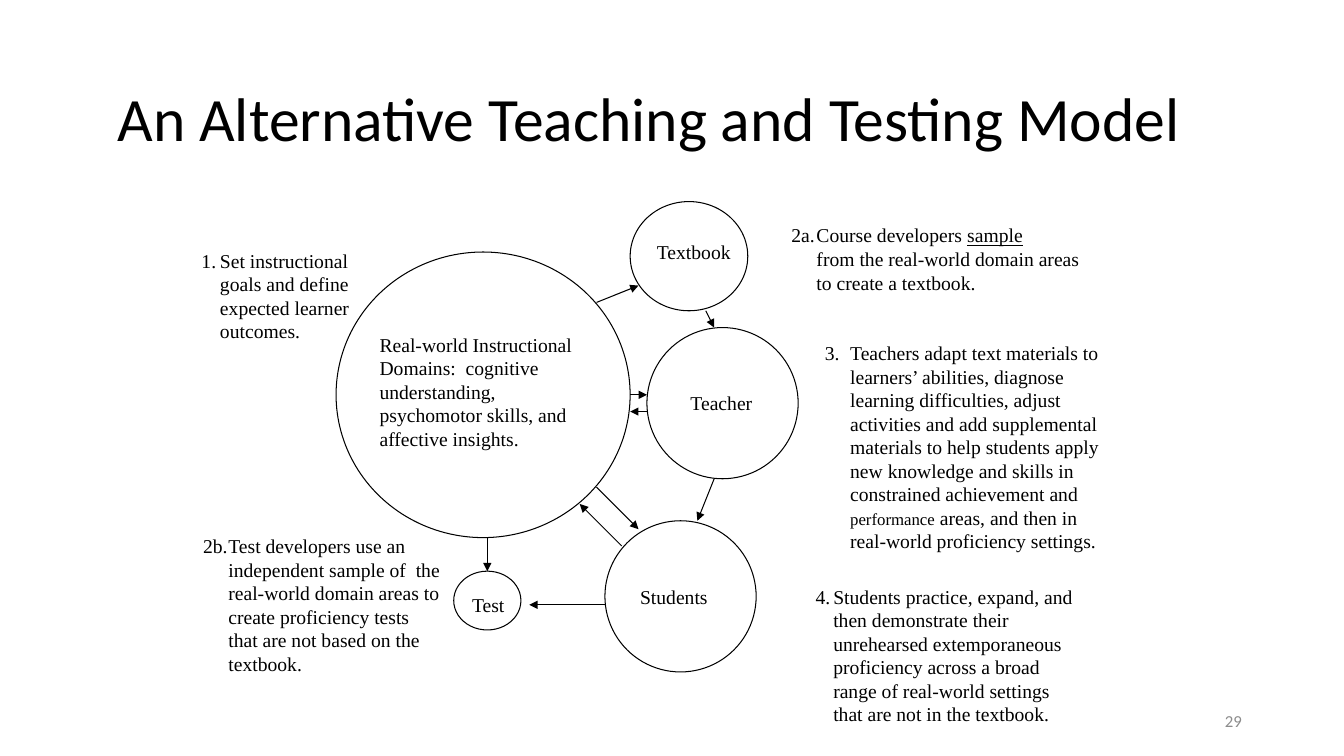
from lxml import etree
from pptx import Presentation, util as u
from pptx.dml.color import RGBColor
from pptx.enum import shapes, text
from pptx.oxml.ns import qn

prs = Presentation()
prs.slide_width, prs.slide_height = u.Inches(13.33), u.Inches(7.5)
s = prs.slides.add_slide(prs.slide_layouts[6])

INK, GREY = "000000", "8C8C8C"
SERIF, SANS = "Times New Roman", "Calibri"


def grid(*cells):
    """Turn twelfths of an inch into lengths."""
    return [u.Inches(c / 12) for c in cells]


def add_text(box, words, font=SERIF, size=14, color=INK, wrap=True):
    """Add a text box at box, in grid cells, and return its text frame."""
    tf = s.shapes.add_textbox(*grid(*box)).text_frame
    tf.word_wrap = wrap
    tf.text = words
    for r in tf.paragraphs[0].runs:
        r.font.name, r.font.size = font, u.Pt(size)
        r.font.color.rgb = RGBColor.from_string(color)
    return tf


# Title and slide number
title = add_text((12.8, 3.1, 132, 22.8), "An Alternative Teaching and Testing Model", SANS, 44)
title.paragraphs[0].line_spacing = 0.9
number = add_text((113, 83.4, 36, 4.8), "29", SANS, 12, GREY)
number.paragraphs[0].alignment = text.PP_ALIGN.RIGHT
for tf in (title, number):
    tf.vertical_anchor = text.MSO_ANCHOR.MIDDLE

# Circles with their captions
circles = [
    ((40, 30, 35, 34), (44, 39, 29, 15.4),
     "Real-world Instructional Domains:  cognitive understanding, "
     "psychomotor skills, and affective insights."),
    ((75, 24, 14, 13), (77, 28, 13, 4), "Textbook"),
    ((77, 39, 18, 18), (81, 46, 13, 4), "Teacher"),
    ((72, 62, 18, 18), (75, 69, 13, 4), "Students"),
    ((54, 68, 8, 7), (55, 70, 13, 4), "Test"),
]
for outline, caption, words in circles:
    sp = s.shapes.add_shape(shapes.MSO_SHAPE.OVAL, *grid(*outline))
    sp.shadow.inherit = False
    sp.fill.background()
    sp.line.color.rgb = RGBColor.from_string(INK)
    sp.line.width = u.Pt(0.75)
    add_text(caption, words)

# Arrows, each from x, y to x, y
arrows = [
    (71, 36, 76, 34), (84, 37, 85, 39),
    (75, 47, 77, 47), (77, 49, 75, 49),
    (85, 57, 83, 62), (72, 72, 63, 72),
    (58, 64, 58, 68), (74, 65, 69, 60), (71, 58, 76, 63),
]
for ends in arrows:
    arrow = s.shapes.add_connector(shapes.MSO_CONNECTOR.STRAIGHT, *grid(*ends))
    arrow.line.color.rgb = RGBColor.from_string(INK)
    arrow.line.width = u.Pt(0.75)
    etree.SubElement(arrow.get_or_add_ln(), qn("a:tailEnd"), type="triangle")
    etree.SubElement(arrow._element.spPr, qn("a:effectLst"))

# Numbered notes: number, its x, box of the note, words
notes = [
    ("1.", 22.8, (19, 29, 27, 12.5),
     "Set instructional goals and define expected learner outcomes."),
    ("2a.", 93, (90, 26, 41, 9.7),
     "Course developers |sample|\vfrom the real-world domain areas to create a textbook."),
    ("2b.", 23, (20, 63, 34, 18.1),
     "Test developers use an independent sample of  the real-world domain areas "
     "to create proficiency tests that are not based on the textbook."),
    ("3.", 97, (94, 40, 40, 26.6),
     "Teachers adapt text materials to learners’ abilities, diagnose learning "
     "difficulties, adjust activities and add supplemental materials to help students "
     "apply new knowledge and skills in constrained achievement and |performance| "
     "areas, and then in real-world proficiency settings."),
    ("4.", 95.9, (92, 69, 37, 18.1),
     "Students practice, expand, and then demonstrate their unrehearsed extemporaneous "
     "proficiency across a broad range of real-world settings that are not in the textbook."),
]
for label, x, box, words in notes:
    # Room for the widest number, so that it stays on one line
    add_text((x, box[1], 7, 4), label, wrap=False)
    start, *rest = words.split("|")
    p = add_text(box, start).paragraphs[0]
    p._p.get_or_add_pPr().set("marL", str(u.Inches(0.5)))
    for part in rest:
        if part.startswith("\v"):
            p.add_line_break()
        r = p.add_run()
        r.text = part.lstrip("\v")
        r.font.name = SERIF
        r.font.size = u.Pt(12 if part == "performance" else 14)
        r.font.underline = True if part == "sample" else None
        r.font.color.rgb = RGBColor.from_string(INK)

prs.save("out.pptx")
